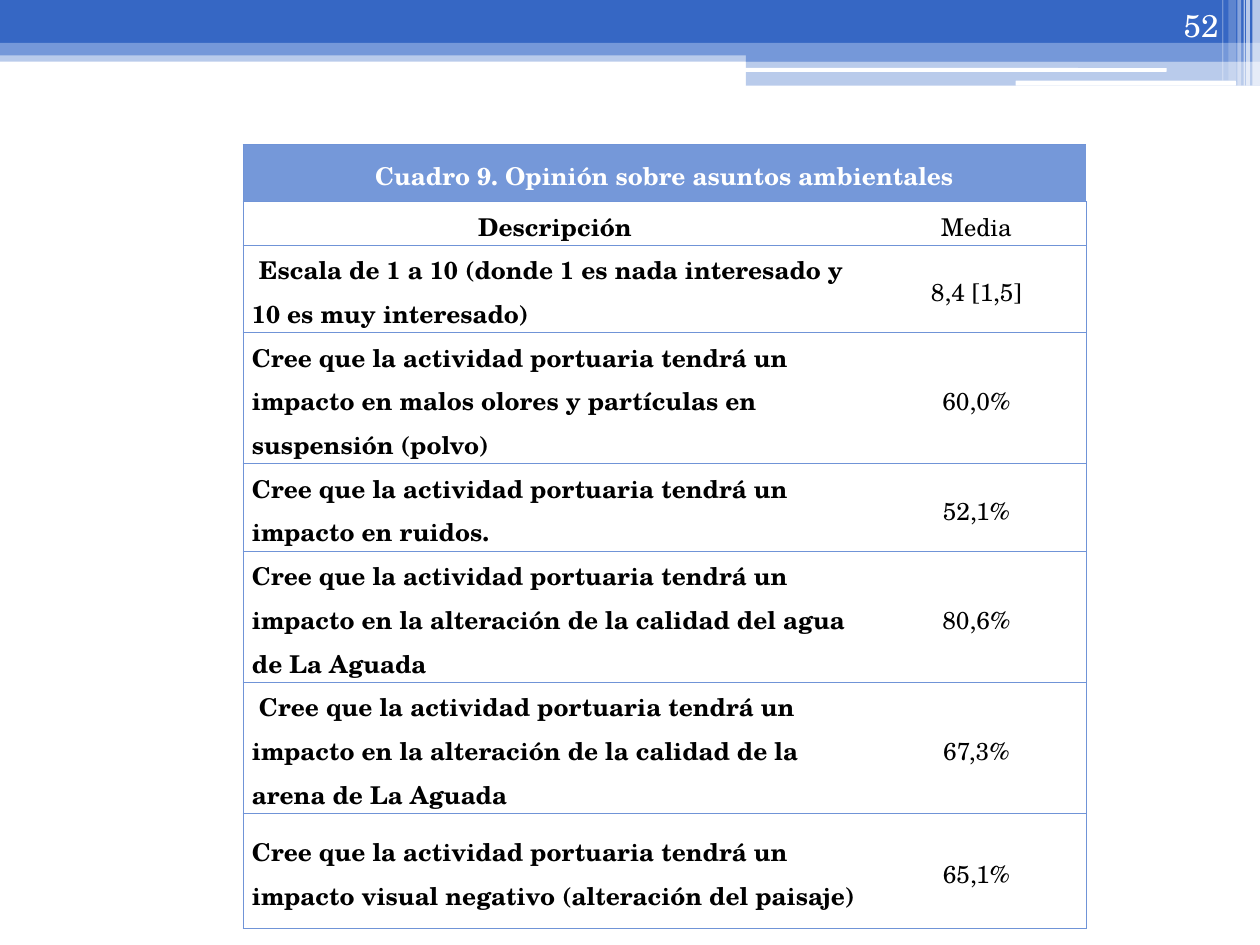
"""Build the slide with the table of opinions on environmental matters."""
from dataclasses import dataclass
from typing import NamedTuple

from lxml import etree
from pptx import Presentation
from pptx import util as u
from pptx.dml.color import RGBColor
from pptx.enum import shapes, text
from pptx.oxml import ns

COLUMNS, ROWS = 100, 75
CELL = u.Inches(0.1)


@dataclass(frozen=True)
class Theme:
    font: str = "TeX Gyre Schola"
    dark: str = "3667C4"
    accent: str = "7598D9"
    rule: str = "7094D7"
    light: str = "FFFFFF"
    ink: str = "000000"
    body_size: float = 14
    number_size: float = 18
    rule_width: float = 0.75
    line_spacing: float = 1.15


class Band(NamedTuple):
    left: float
    top: float
    width: float
    height: float
    color: str
    opacity: int = 100
    rounded: bool = False


class Opinion(NamedTuple):
    description: str
    mean: str
    height: float


THEME = Theme()
BELIEF = "Cree que la actividad portuaria tendrá un impacto "

BANDS = [
    Band(0, 4, COLUMNS, 0.9, THEME.accent, 50),
    Band(0, 0, COLUMNS, 3.4, THEME.dark),
    Band(0, 3.4, COLUMNS, 1, THEME.accent),
    Band(59.2, 3.9, 40.8, 1, THEME.accent),
    Band(59.2, 4.8, 40.8, 2, THEME.accent, 50),
    Band(59.1, 5.4, 33.5, 0.3, THEME.light, rounded=True),
    Band(80.6, 6.4, 17.5, 0.4, THEME.light, rounded=True),
    Band(99.4, 0, 0.6, 6.8, THEME.light, 65),
    Band(98.9, 0, 0.3, 6.8, THEME.light, 65),
    Band(98.7, 0, 0.1, 6.8, THEME.light, 60),
    Band(98.2, 0, 0.3, 6.8, THEME.light, 40),
    Band(97.5, 0, 0.6, 6.4, THEME.light, 20),
    Band(97, 0, 0.1, 6.4, THEME.light, 30),
]

CAPTION = "Cuadro 9. Opinión sobre asuntos ambientales"
CAPTION_HEIGHT = 4.5
TABLE_LEFT, TABLE_TOP = 19.3, 11.5
TABLE_COLUMNS = (49.5, 17.4)
LINE = 3.47
OPINIONS = [
    Opinion("Descripción", "Media", LINE),
    Opinion(" Escala de 1 a 10 (donde 1 es nada interesado y 10 es muy interesado)",
            "8,4 [1,5]", 2 * LINE),
    Opinion(BELIEF + "en malos olores y partículas en suspensión (polvo)", "60,0%", 3 * LINE),
    Opinion(BELIEF + "en ruidos.", "52,1%", 2 * LINE),
    Opinion(BELIEF + "en la alteración de la calidad del agua de La Aguada", "80,6%", 3 * LINE),
    Opinion(" " + BELIEF + "en la alteración de la calidad de la arena de La Aguada",
            "67,3%", 3 * LINE),
    Opinion(BELIEF + "visual negativo (alteración del paisaje)", "65,1%", 9.1),
]


def grid(*lengths: float) -> list[int]:
    """Turn grid units into slide lengths."""
    return [round(length * CELL) for length in lengths]


def draw_band(slide, band: Band) -> None:
    """Draw one bar of the header decoration."""
    kind = shapes.MSO_SHAPE.ROUNDED_RECTANGLE if band.rounded else shapes.MSO_SHAPE.RECTANGLE
    bar = slide.shapes.add_shape(kind, *grid(*band[:4]))
    bar.shadow.inherit = False
    bar.line.fill.background()
    bar.fill.solid()
    bar.fill.fore_color.rgb = RGBColor.from_string(band.color)
    if band.opacity < 100:
        color = bar.fill._xPr.find(".//" + ns.qn("a:srgbClr"))
        etree.SubElement(color, ns.qn("a:alpha"), val=str(band.opacity * 1000))


def write(frame, words: str, size: float, color: str, align, bold: bool = False):
    """Write one formatted run and return its paragraph."""
    paragraph = frame.paragraphs[0]
    paragraph.alignment = align
    run = paragraph.add_run()
    run.text = words
    run.font.name = THEME.font
    run.font.size = u.Pt(size)
    run.font.bold = bold
    run.font.color.rgb = RGBColor.from_string(color)
    return paragraph


def draw_page_number(slide, number: str) -> None:
    """Put the page number in the header."""
    frame = slide.shapes.add_textbox(*grid(89.4, 0, 8.3, 4)).text_frame
    frame.word_wrap = True
    frame.vertical_anchor = text.MSO_ANCHOR.BOTTOM
    write(frame, number, THEME.number_size, THEME.light, text.PP_ALIGN.RIGHT)


def rule_cell(cell, visible: str) -> None:
    """Rule the named sides of a cell and clear the others."""
    properties = cell._tc.get_or_add_tcPr()
    for index, side in enumerate("LRTB"):
        line = etree.Element(ns.qn(f"a:ln{side}"), w=str(u.Pt(THEME.rule_width)))
        if side in visible:
            fill = etree.SubElement(line, ns.qn("a:solidFill"))
            etree.SubElement(fill, ns.qn("a:srgbClr"), val=THEME.rule)
        else:
            etree.SubElement(line, ns.qn("a:noFill"))
        properties.insert(index, line)


def fill_cell(cell, words: str, color: str, align, bold: bool) -> None:
    """Write centred-height text into a table cell."""
    cell.vertical_anchor = text.MSO_ANCHOR.MIDDLE
    cell.margin_left = cell.margin_right = u.Inches(0.07)
    cell.margin_top = cell.margin_bottom = 0
    paragraph = write(cell.text_frame, words, THEME.body_size, color, align, bold)
    paragraph.line_spacing = THEME.line_spacing


def draw_table(slide) -> None:
    """Draw the captioned table of opinions."""
    heights = [CAPTION_HEIGHT] + [opinion.height for opinion in OPINIONS]
    table = slide.shapes.add_table(
        len(heights), len(TABLE_COLUMNS),
        *grid(TABLE_LEFT, TABLE_TOP, sum(TABLE_COLUMNS), sum(heights))).table
    table.first_row = table.horz_banding = False
    for column, width in zip(table.columns, grid(*TABLE_COLUMNS)):
        column.width = width
    for row, height in zip(table.rows, grid(*heights)):
        row.height = height
        for cell, sides in zip(row.cells, ("LTB", "RTB")):
            cell.fill.background()
            rule_cell(cell, sides)

    center, left = text.PP_ALIGN.CENTER, text.PP_ALIGN.LEFT
    caption = table.cell(0, 0)
    caption.merge(table.cell(0, 1))
    caption.fill.solid()
    caption.fill.fore_color.rgb = RGBColor.from_string(THEME.accent)
    fill_cell(caption, CAPTION, THEME.light, center, True)
    for index, opinion in enumerate(OPINIONS, start=1):
        align = center if index == 1 else left
        fill_cell(table.cell(index, 0), opinion.description, THEME.ink, align, True)
        fill_cell(table.cell(index, 1), opinion.mean, THEME.ink, center, False)


def main() -> None:
    """Build and save the slide."""
    deck = Presentation()
    deck.slide_width, deck.slide_height = grid(COLUMNS, ROWS)
    slide = deck.slides.add_slide(deck.slide_layouts[6])
    for band in BANDS:
        draw_band(slide, band)
    draw_page_number(slide, "52")
    draw_table(slide)
    deck.save("out.pptx")


if __name__ == "__main__":
    main()
